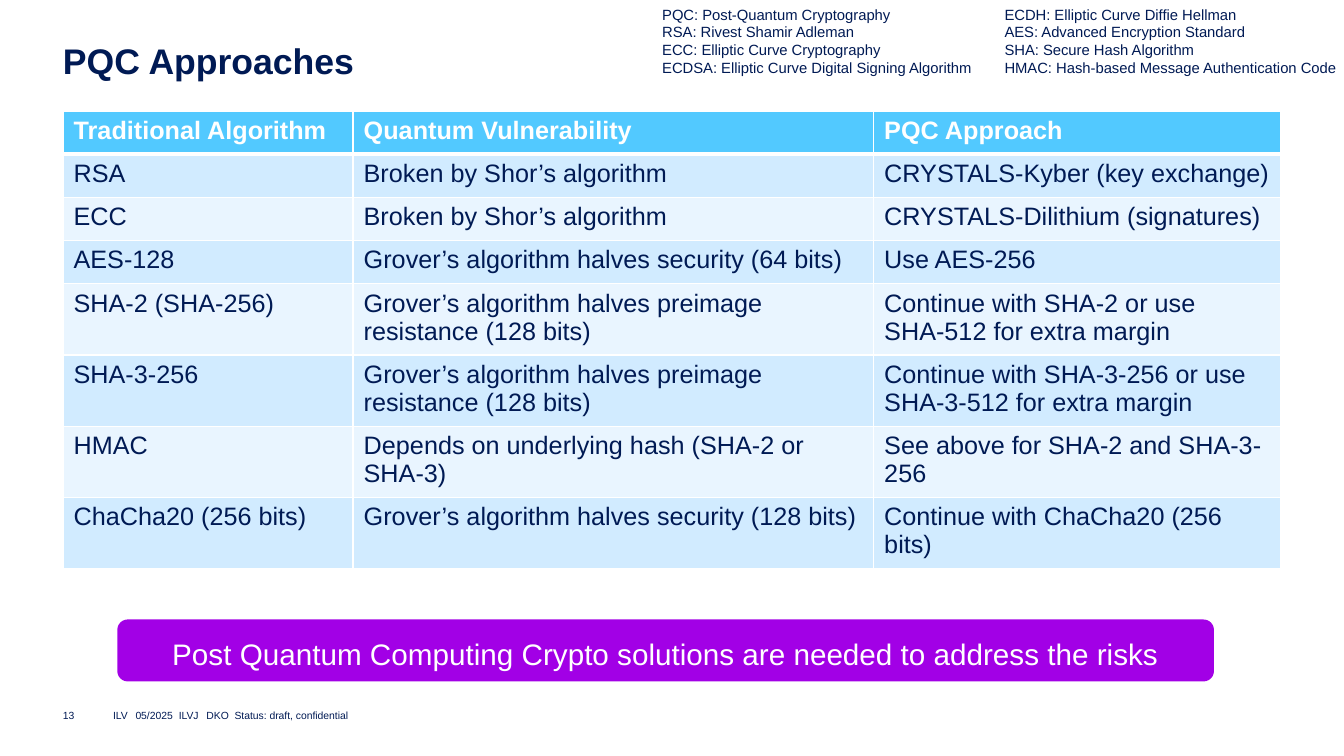
import pptx
import pptx.util
import pptx.dml.color
import pptx.enum.shapes
import pptx.enum.text
import pptx.oxml
import pptx.oxml.ns

Pt = pptx.util.Pt
Rgb = pptx.dml.color.RGBColor.from_string
Align = pptx.enum.text.PP_ALIGN
Anchor = pptx.enum.text.MSO_ANCHOR
hues = {"navy": "001A54", "white": "FFFFFF", "purple": "A200E6",
        "head": "52C9FF", "odd": "D1EBFF", "even": "E9F5FF"}


def style(frame, size, hue, bold=False):
    for para in frame.paragraphs:
        for run in para.runs:
            run.font.name = "Arial"
            run.font.size = Pt(size)
            run.font.bold = bold
            run.font.color.rgb = Rgb(hues[hue])


def inset(frame, left, top, right, bottom):
    frame.margin_left, frame.margin_top = Pt(left), Pt(top)
    frame.margin_right, frame.margin_bottom = Pt(right), Pt(bottom)
    frame.word_wrap = True


deck = pptx.Presentation()
deck.slide_width, deck.slide_height = Pt(907.2), Pt(510.48)
slide = deck.slides.add_slide(deck.slide_layouts[5])
shapes = slide.shapes

title = shapes.title
title.left, title.top, title.width, title.height = Pt(42.5), Pt(28), Pt(822.24), Pt(28.8)
frame = title.text_frame
frame.text = "PQC Approaches"
inset(frame, 0, 0, 0, 0)
frame.vertical_anchor = Anchor.TOP
frame.paragraphs[0].alignment = Align.LEFT
frame.paragraphs[0].line_spacing = 0.97
style(frame, 24, "navy", True)

notes = [(76.3, 363, "ILV\t05/2025\tILVJ\tDKO\tStatus: draft, confidential"),
         (42.5, 28, "13")]
for left, width, text in notes:
    frame = shapes.add_textbox(Pt(left), Pt(476), Pt(width), Pt(14.4)).text_frame
    frame.text = text
    inset(frame, 0, 0, 0, 0)
    frame.vertical_anchor = Anchor.MIDDLE
    if "\t" in text:
        props = frame.paragraphs[0]._p.get_or_add_pPr()
        tabs = pptx.oxml.ns.qn("a:tabLst")
        stops = props.makeelement(tabs, {})
        props.append(stops)
        for stop in (15.2, 44.4, 63.1, 82.1):
            tab = stops.makeelement(pptx.oxml.ns.qn("a:tab"), {"pos": str(Pt(stop)), "algn": "l"})
            stops.append(tab)
    style(frame, 7, "navy")

banner = shapes.add_shape(pptx.enum.shapes.MSO_SHAPE.ROUNDED_RECTANGLE,
                          Pt(79.2), Pt(418.3), Pt(740.2), Pt(41.8))
banner.shadow.inherit = False
banner.fill.solid()
banner.fill.fore_color.rgb = Rgb(hues["purple"])
banner.line.fill.background()
frame = banner.text_frame
frame.text = "Post Quantum Computing Crypto solutions are needed to address the risks"
inset(frame, 11.5, 12.5, 11.5, 7.5)
frame.vertical_anchor = Anchor.MIDDLE
frame.paragraphs[0].alignment = Align.CENTER
style(frame, 20, "white")

terms = [
    (671, ["ECDH: Elliptic Curve Diffie Hellman", "AES: Advanced Encryption Standard",
           "SHA: Secure Hash Algorithm", "HMAC: Hash-based Message Authentication Code"]),
    (439.9, ["PQC: Post-Quantum Cryptography", "RSA: Rivest Shamir Adleman",
             "ECC: Elliptic Curve Cryptography", "ECDSA: Elliptic Curve Digital Signing Algorithm"]),
]
for left, lines in terms:
    frame = shapes.add_textbox(Pt(left), Pt(0), Pt(247), Pt(55.4)).text_frame
    frame.text = "\n".join(lines)
    frame.word_wrap = True
    style(frame, 10, "navy")

rows = [
    ("Traditional Algorithm", "Quantum Vulnerability", "PQC Approach"),
    ("RSA", "Broken by Shor’s algorithm", "CRYSTALS-Kyber (key exchange)"),
    ("ECC", "Broken by Shor’s algorithm", "CRYSTALS-Dilithium (signatures)"),
    ("AES-128", "Grover’s algorithm halves security (64 bits)", "Use AES-256"),
    ("SHA-2 (SHA-256)", "Grover’s algorithm halves preimage resistance (128 bits)",
     "Continue with SHA-2 or use SHA-512 for extra margin"),
    ("SHA-3-256", "Grover’s algorithm halves preimage resistance (128 bits)",
     "Continue with SHA-3-256 or use SHA-3-512 for extra margin"),
    ("HMAC", "Depends on underlying hash (SHA-2 or SHA-3)", "See above for SHA-2 and SHA-3-256"),
    ("ChaCha20 (256 bits)", "Grover’s algorithm halves security (128 bits)",
     "Continue with ChaCha20 (256 bits)"),
]
table = shapes.add_table(len(rows), 3, Pt(42.5), Pt(74.9), Pt(822.24), Pt(29.2 * len(rows))).table
for col, width in zip(table.columns, (195.84, 351.36, 275.04)):
    col.width = Pt(width)
for r, row in enumerate(rows):
    table.rows[r].height = Pt(29.2)
    fill = "head" if r == 0 else "odd" if r % 2 else "even"
    edges = {"L": 1, "R": 1, "T": 3 if r == 1 else 1, "B": 3 if r == 0 else 1}
    for c, text in enumerate(row):
        cell = table.cell(r, c)
        cell.text_frame.text = text
        cell.fill.solid()
        cell.fill.fore_color.rgb = Rgb(hues[fill])
        style(cell.text_frame, 17, "navy" if r else "white", r == 0)
        props = cell._tc.get_or_add_tcPr()
        for i, (side, width) in enumerate(edges.items()):
            props.insert(i, pptx.oxml.parse_xml(
                f'<a:ln{side} {pptx.oxml.ns.nsdecls("a")} w="{Pt(width)}"><a:solidFill>'
                f'<a:srgbClr val="{hues["white"]}"/></a:solidFill></a:ln{side}>'))

deck.save("out.pptx")
